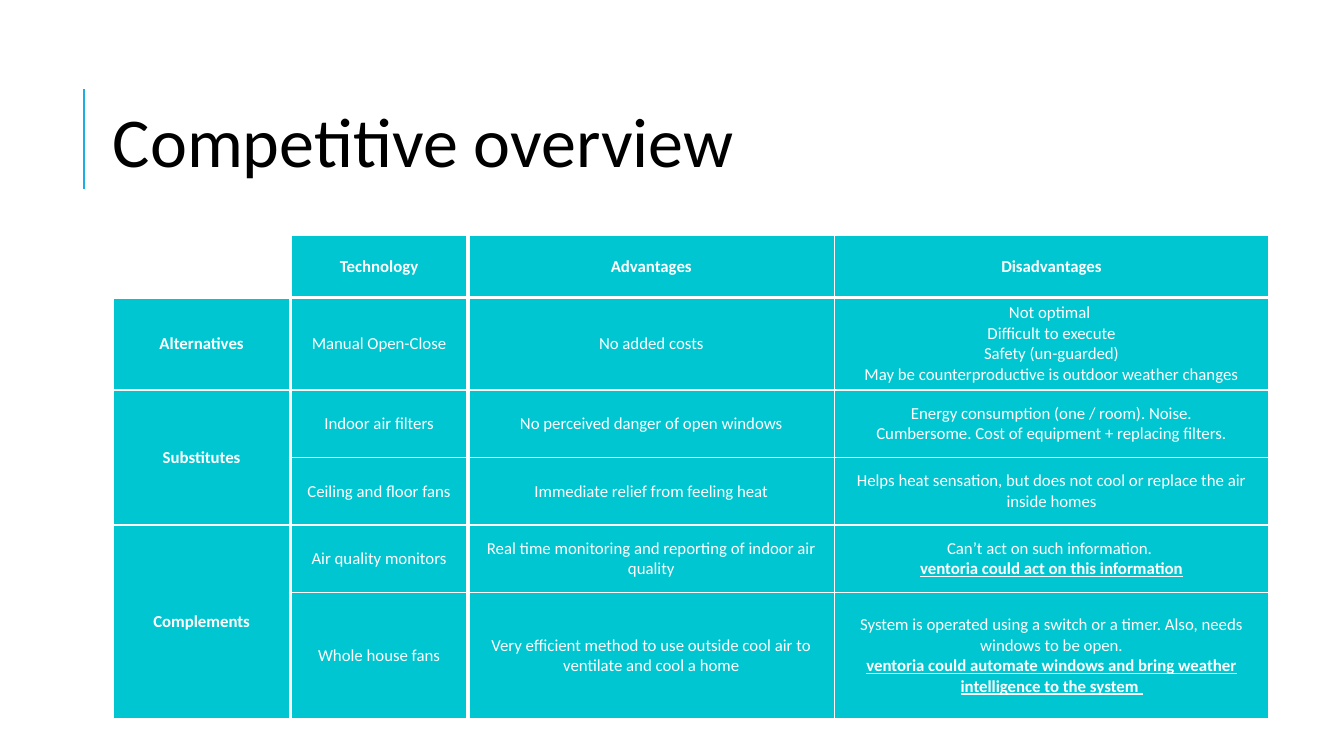
"""Build the competitive overview slide: a title with an accent line and a table."""
from lxml.etree import SubElement
from pptx import Presentation
from pptx.dml.color import RGBColor
from pptx.enum.shapes import MSO_CONNECTOR
from pptx.enum.text import MSO_ANCHOR, PP_ALIGN
from pptx.oxml import parse_xml
from pptx.oxml.ns import nsdecls, qn
from pptx.util import Inches, Pt

FONT = "Calibri"
COLORS = {"accent": "1CADE4", "title": "000000", "cell": "00C6D1", "white": "FFFFFF"}
PRODUCT = "ventoria"
COL_WIDTHS = [1.76, 1.76, 3.64, 4.3]
ROW_HEIGHTS = [0.61, 0.92, 0.67, 0.67, 0.67, 1.25]
THIN, THICK = 1, 3
ROWS = [
    ["", "Technology", "Advantages", "Disadvantages"],
    ["Alternatives", "Manual Open-Close", "No added costs",
     "Not optimal \nDifficult to execute\nSafety (un-guarded)\n"
     "May be counterproductive is outdoor weather changes"],
    ["Substitutes", "Indoor air filters", "No perceived danger of open windows",
     "Energy consumption (one / room). Noise.\n"
     "Cumbersome. Cost of equipment + replacing filters."],
    ["", "Ceiling and floor fans", "Immediate relief from feeling heat",
     "Helps heat sensation, but does not cool or replace the air inside homes"],
    ["Complements", "Air quality monitors",
     "Real time monitoring and reporting of indoor air quality",
     f"Can’t act on such information. \n{PRODUCT} could act on this information"],
    ["", "Whole house fans",
     "Very efficient method to use outside cool air to ventilate and cool a home",
     "System is operated using a switch or a timer. Also, needs windows to be open.\n"
     f"{PRODUCT} could automate windows and bring weather intelligence to the system "],
]
MERGED_ROWS = [(2, 3), (4, 5)]


def rgb(name):
    return RGBColor.from_string(COLORS[name])


def add_run(p, text, size, color, bold=False, underline=False):
    r = p.add_run()
    r.text = text
    r.font.name = FONT
    r.font.size = Pt(size)
    r.font.bold = bold
    r.font.underline = underline
    r.font.color.rgb = rgb(color)


def add_accent_line(s):
    line = s.shapes.add_connector(
        MSO_CONNECTOR.STRAIGHT, Inches(0.83), Inches(1.88), Inches(0.83), Inches(0.88))
    line.line.color.rgb = rgb("accent")
    line.line.width = Pt(1.5)
    SubElement(line._element.spPr, qn("a:effectLst"))


def add_title(s, text):
    box = s.shapes.add_textbox(Inches(1.12), Inches(0.62), Inches(10.63), Inches(1.64))
    tf = box.text_frame
    tf.word_wrap = True
    tf.vertical_anchor = MSO_ANCHOR.MIDDLE
    tf.margin_left = tf.margin_right = tf.margin_top = tf.margin_bottom = 0
    p = tf.paragraphs[0]
    p.line_spacing = 0.9
    add_run(p, text, 50, "title")


def set_borders(cell, **widths):
    tc_pr = cell._tc.get_or_add_tcPr()
    for i, (side, width) in enumerate(widths.items()):
        tc_pr.insert(i, parse_xml(
            f'<a:ln{side} {nsdecls("a")} w="{Pt(width)}"><a:solidFill>'
            f'<a:srgbClr val="{COLORS["white"]}"/></a:solidFill></a:ln{side}>'))


def fill_cell(cell, text, bold):
    cell.vertical_anchor = MSO_ANCHOR.MIDDLE
    tf = cell.text_frame
    for i, line in enumerate(text.split("\n")):
        p = tf.add_paragraph() if i else tf.paragraphs[0]
        p.alignment = PP_ALIGN.CENTER
        if line:
            stressed = line.startswith(PRODUCT)
            add_run(p, line, 12, "white", bold or stressed, stressed)


def add_overview_table(s):
    frame = s.shapes.add_table(
        len(ROWS), len(COL_WIDTHS), Inches(1.12), Inches(2.34),
        Inches(sum(COL_WIDTHS)), Inches(sum(ROW_HEIGHTS)))
    table = frame.table
    table.horz_banding = False
    for col, width in zip(table.columns, COL_WIDTHS):
        col.width = Inches(width)
    for row, height in zip(table.rows, ROW_HEIGHTS):
        row.height = Inches(height)
    for i, texts in enumerate(ROWS):
        for j, text in enumerate(texts):
            cell = table.cell(i, j)
            fill_cell(cell, text, bold=i == 0 or j == 0)
            if i == j == 0:
                cell.fill.background()
            else:
                cell.fill.solid()
                cell.fill.fore_color.rgb = rgb("cell")
            set_borders(cell,
                        L=THICK if j in (1, 2) else THIN,
                        R=THICK if j in (0, 1) else THIN,
                        T=THICK if i == 1 else THIN,
                        B=THICK if i == 0 else THIN)
    for first, last in MERGED_ROWS:
        table.cell(first, 0).merge(table.cell(last, 0))


def main():
    prs = Presentation()
    prs.slide_width, prs.slide_height = Inches(13.33), Inches(7.5)
    s = prs.slides.add_slide(prs.slide_layouts[6])
    add_accent_line(s)
    add_title(s, "Competitive overview")
    add_overview_table(s)
    prs.save("out.pptx")


if __name__ == "__main__":
    main()
